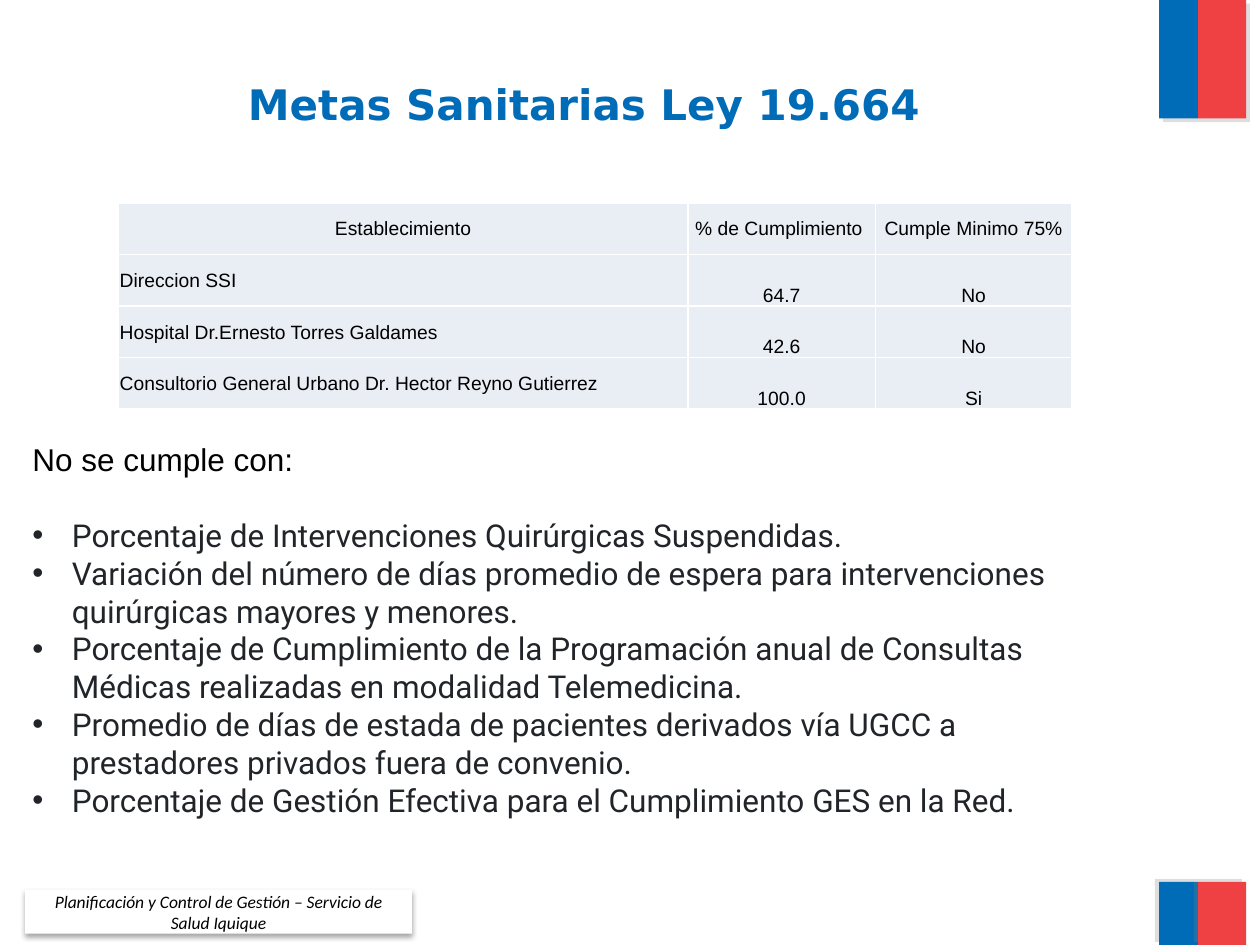
"""Build the slide on health goals under Ley 19.664."""
from lxml import etree
from pptx import Presentation
from pptx.dml.color import RGBColor
from pptx.enum.shapes import MSO_SHAPE
from pptx.enum.text import MSO_ANCHOR, PP_ALIGN
from pptx.oxml import parse_xml
from pptx.oxml.ns import nsdecls, qn
from pptx.util import Pt

RECTANGLE = MSO_SHAPE.RECTANGLE
LEFT, CENTER = PP_ALIGN.LEFT, PP_ALIGN.CENTER
TOP, MIDDLE, BOTTOM = MSO_ANCHOR.TOP, MSO_ANCHOR.MIDDLE, MSO_ANCHOR.BOTTOM
BLUE, RED, WHITE, BLACK = "006CB7", "EF4144", "FFFFFF", "000000"
INK, CELL_FILL = "212529", "E9EDF4"

TITLE = "Metas Sanitarias Ley 19.664"
FOOTER = "Planificación y Control de Gestión – Servicio de Salud Iquique"
ROWS = [
    ("Establecimiento", "% de Cumplimiento ", "Cumple Minimo 75%"),
    ("Direccion SSI", "64.7", "No"),
    ("Hospital Dr.Ernesto Torres Galdames", "42.6", "No"),
    ("Consultorio General Urbano Dr. Hector Reyno Gutierrez", "100.0", "Si"),
]
COLUMN_WIDTHS = [325.4, 107.2, 112.2]
ROW_HEIGHT = 29.5
HEADING = "No se cumple con:"
UNMET_GOALS = [
    "Porcentaje de Intervenciones Quirúrgicas Suspendidas.",
    "Variación del número de días promedio de espera para intervenciones "
    "quirúrgicas mayores y menores.",
    "Porcentaje de Cumplimiento de la Programación anual de Consultas "
    "Médicas realizadas en modalidad Telemedicina.",
    "Promedio de días de estada de pacientes derivados vía UGCC a "
    "prestadores privados fuera de convenio.",
    "Porcentaje de Gestión Efectiva para el Cumplimiento GES en la Red.",
]
FLAG_COLUMNS = [(662.4, 22.3, BLUE), (684.7, 27.4, RED)]
FLAG_ROWS = [(0, 67.7, 45), (504, 36, 215)]
BULLET_INDENT = 22.5


def color(value):
    return RGBColor.from_string(value)


def write(frame, text, font, size, ink=BLACK, align=LEFT, bold=False,
          italic=False, bullet=False, after=0):
    first = frame.paragraphs[0]
    para = frame.add_paragraph() if first.runs else first
    para.alignment, para.space_after = align, Pt(after)
    span = para.add_run()
    span.text = text
    span.font.name, span.font.size = font, Pt(size)
    span.font.bold, span.font.italic = bold, italic
    span.font.color.rgb = color(ink)
    if bullet:
        properties = para._p.get_or_add_pPr()
        properties.set("marL", str(Pt(BULLET_INDENT)))
        properties.set("indent", str(-Pt(BULLET_INDENT)))
        etree.SubElement(properties, qn("a:buFont"), typeface="Arial")
        etree.SubElement(properties, qn("a:buChar"), char="•")


def add_box(page, left, top, width, height, anchor=TOP):
    box = page.shapes.add_textbox(Pt(left), Pt(top), Pt(width), Pt(height))
    box.text_frame.word_wrap = True
    box.text_frame.vertical_anchor = anchor
    return box


def add_panel(page, left, top, width, height, fill, shade, opacity, blur,
              distance, angle):
    panel = page.shapes.add_shape(
        RECTANGLE, Pt(left), Pt(top), Pt(width), Pt(height))
    panel.fill.solid()
    panel.fill.fore_color.rgb = color(fill)
    panel.line.fill.background()
    panel.shadow.inherit = False
    panel._element.spPr.find(qn("a:effectLst")).append(parse_xml(
        f'<a:outerShdw {nsdecls("a")} blurRad="{Pt(blur)}" '
        f'dist="{Pt(distance)}" dir="{angle * 60000}" algn="ctr" '
        f'rotWithShape="0"><a:srgbClr val="{shade}">'
        f'<a:alpha val="{opacity * 1000}"/></a:srgbClr></a:outerShdw>'))
    return panel


def add_borders(cell):
    properties = cell._tc.get_or_add_tcPr()
    for position, side in enumerate(("lnL", "lnR", "lnT", "lnB")):
        properties.insert(position, parse_xml(
            f'<a:{side} {nsdecls("a")} w="{Pt(1)}"><a:solidFill>'
            f'<a:srgbClr val="{WHITE}"/></a:solidFill></a:{side}>'))


def add_results(page, left, top):
    table = page.shapes.add_table(
        len(ROWS), len(COLUMN_WIDTHS), Pt(left), Pt(top),
        Pt(sum(COLUMN_WIDTHS)), Pt(ROW_HEIGHT * len(ROWS))).table
    for column, width in zip(table.columns, COLUMN_WIDTHS):
        column.width = Pt(width)
    for row_index, values in enumerate(ROWS):
        table.rows[row_index].height = Pt(ROW_HEIGHT)
        for column_index, text in enumerate(values):
            is_result = row_index > 0 and column_index > 0
            is_name = row_index > 0 and column_index == 0
            cell = table.cell(row_index, column_index)
            cell.fill.solid()
            cell.fill.fore_color.rgb = color(CELL_FILL)
            cell.margin_left = cell.margin_right = cell.margin_top = Pt(0.7)
            cell.margin_bottom = 0
            cell.vertical_anchor = BOTTOM if is_result else MIDDLE
            write(cell.text_frame, text, "Arial", 11,
                  align=LEFT if is_name else CENTER)
            add_borders(cell)


def main():
    deck = Presentation()
    deck.slide_width, deck.slide_height = Pt(720), Pt(540)
    page = deck.slides.add_slide(deck.slide_layouts[6])

    for top, height, angle in FLAG_ROWS:
        for left, width, fill in FLAG_COLUMNS:
            add_panel(page, left, top, width, height, fill,
                      "808080", 25, 0, 3, angle)

    title = add_box(page, 12.2, 14.4, 643, 90, MIDDLE)
    write(title.text_frame, TITLE, "DejaVu Sans", 24, BLUE, CENTER, bold=True)

    footer = add_panel(page, 14.4, 508.3, 221, 25.2, WHITE,
                       BLACK, 35, 3.1, 1.8, 90)
    footer.text_frame.word_wrap = True
    footer.text_frame.vertical_anchor = MIDDLE
    write(footer.text_frame, FOOTER, "Calibri", 10, align=CENTER, italic=True)

    body = add_box(page, 11.5, 247.7, 607, 247).text_frame
    write(body, HEADING, "Arial", 18, after=22)
    for goal in UNMET_GOALS:
        write(body, goal, "Roboto", 18, INK, bullet=True)

    add_results(page, 67.7, 115.9)
    deck.save("out.pptx")


if __name__ == "__main__":
    main()
